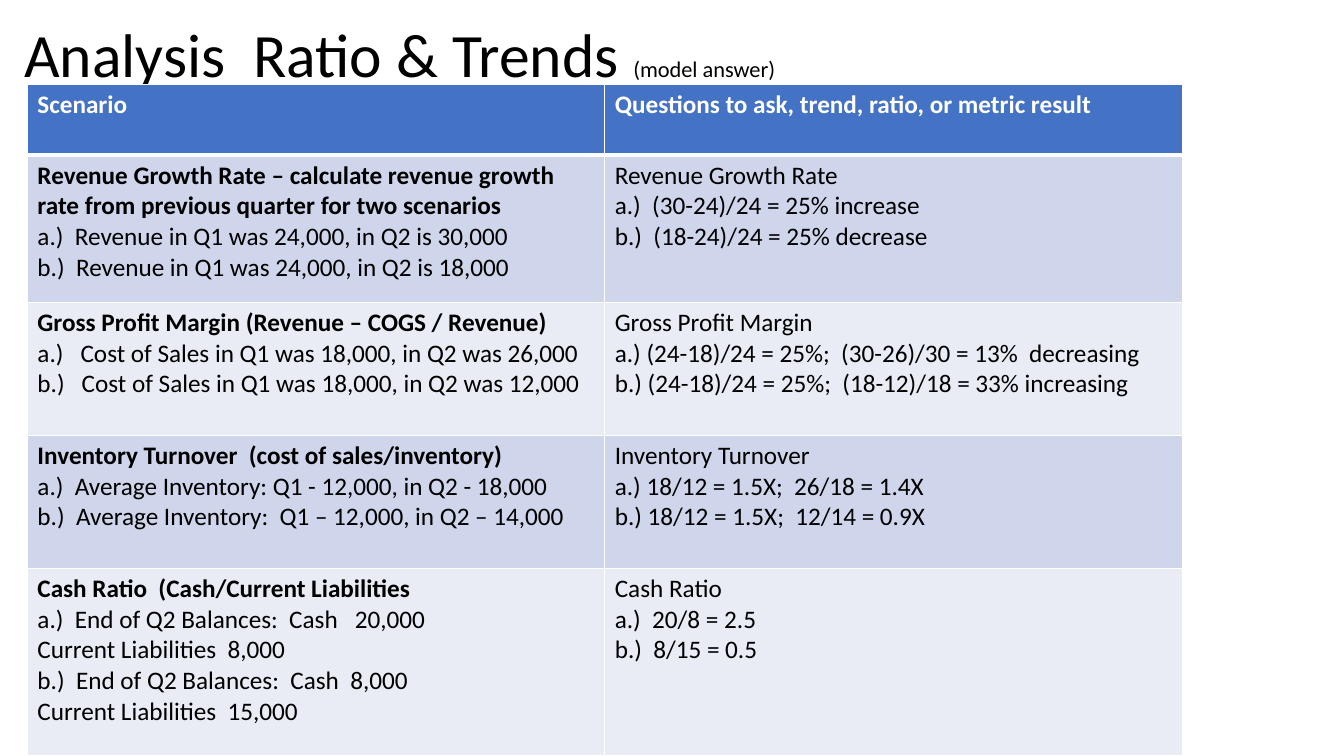
"""Build a slide with a table of financial ratio scenarios and model answers."""
from dataclasses import dataclass

from lxml.etree import SubElement
from pptx import Presentation
from pptx.dml.color import RGBColor
from pptx.enum.text import MSO_ANCHOR, MSO_AUTO_SIZE, PP_ALIGN
from pptx.oxml.ns import qn
from pptx.util import Cm, Pt

COLORS = {
    "white": "FFFFFF",
    "black": "000000",
    "header": "4472C4",
    "dark_band": "CFD5EA",
    "light_band": "E9EBF5",
}
FONT = "Calibri"
COLUMN_WIDTH = 14.55


@dataclass(frozen=True)
class RatioRow:
    """Hold one table row: its height in centimetres and the lines of both cells."""

    height: float
    scenario: tuple[str, ...]
    answer: tuple[str, ...]


ROWS = (
    RatioRow(1.78, ("Scenario",), ("Questions to ask, trend, ratio, or metric result",)),
    RatioRow(
        3.71,
        (
            "Revenue Growth Rate – calculate revenue growth rate from previous quarter for two scenarios",
            "a.)  Revenue in Q1 was 24,000, in Q2 is 30,000",
            "b.)  Revenue in Q1 was 24,000, in Q2 is 18,000",
        ),
        ("Revenue Growth Rate", "a.)  (30-24)/24 = 25% increase", "b.)  (18-24)/24 = 25% decrease"),
    ),
    RatioRow(
        3.35,
        (
            "Gross Profit Margin (Revenue – COGS / Revenue)",
            "a.)   Cost of Sales in Q1 was 18,000, in Q2 was 26,000",
            "b.)   Cost of Sales in Q1 was 18,000, in Q2 was 12,000",
        ),
        (
            "Gross Profit Margin",
            "a.) (24-18)/24 = 25%;  (30-26)/30 = 13%  decreasing",
            "b.) (24-18)/24 = 25%;  (18-12)/18 = 33% increasing",
        ),
    ),
    RatioRow(
        3.35,
        (
            "Inventory Turnover  (cost of sales/inventory)",
            "a.)  Average Inventory: Q1 - 12,000, in Q2 - 18,000",
            "b.)  Average Inventory:  Q1 – 12,000, in Q2 – 14,000",
        ),
        ("Inventory Turnover", "a.) 18/12 = 1.5X;  26/18 = 1.4X", "b.) 18/12 = 1.5X;  12/14 = 0.9X"),
    ),
    RatioRow(
        4.72,
        (
            "Cash Ratio  (Cash/Current Liabilities",
            "a.)  End of Q2 Balances:  Cash   20,000",
            "Current Liabilities  8,000",
            "b.)  End of Q2 Balances:  Cash  8,000",
            "Current Liabilities  15,000",
        ),
        ("Cash Ratio", "a.)  20/8 = 2.5", "b.)  8/15 = 0.5"),
    ),
)


def set_font(font, size: float, color: str, bold: bool = False) -> None:
    """Apply the slide's typeface with a size, colour and weight."""
    font.name = FONT
    font.size = Pt(size)
    font.bold = bold
    font.color.rgb = RGBColor.from_string(COLORS[color])


def set_borders(cell, top: float, bottom: float) -> None:
    """Draw white borders, one point wide at the sides."""
    properties = cell._tc.get_or_add_tcPr()
    widths = {"lnL": 1, "lnR": 1, "lnT": top, "lnB": bottom}
    for position, (side, width) in enumerate(widths.items()):
        line = SubElement(properties, qn(f"a:{side}"), w=str(Pt(width)))
        fill = SubElement(line, qn("a:solidFill"))
        SubElement(fill, qn("a:srgbClr"), val=COLORS["white"])
        properties.insert(position, line)


def fill_cell(cell, lines: tuple[str, ...], row: int, column: int) -> None:
    """Write the lines of a cell and style it by its place in the table."""
    band = "header" if row == 0 else ("light_band", "dark_band")[row % 2]
    cell.fill.solid()
    cell.fill.fore_color.rgb = RGBColor.from_string(COLORS[band])
    set_borders(cell, top=3 if row == 1 else 1, bottom=3 if row == 0 else 1)
    frame = cell.text_frame
    frame.text = "\n".join(lines)
    for number, para in enumerate(frame.paragraphs):
        bold = row == 0 or (column == 0 and number == 0)
        set_font(para.font, 18, "white" if row == 0 else "black", bold)


def add_title(page) -> None:
    """Place the title with its smaller remark."""
    title = page.shapes.title
    title.left, title.top, title.width, title.height = Cm(0.36), Cm(0.43), Cm(29.21), Cm(2.06)
    frame = title.text_frame
    frame.word_wrap = True
    frame.auto_size = MSO_AUTO_SIZE.NONE
    frame.vertical_anchor = MSO_ANCHOR.MIDDLE
    para = frame.paragraphs[0]
    para.alignment = PP_ALIGN.LEFT
    para.line_spacing = 0.9
    for text, size in (("Analysis  Ratio & Trends ", 44), ("(model answer)", 16)):
        span = para.add_run()
        span.text = text
        set_font(span.font, size, "black")


def add_ratio_table(page) -> None:
    """Add the table of scenarios and answers."""
    height = sum(row.height for row in ROWS)
    table = page.shapes.add_table(
        len(ROWS), 2, Cm(0.69), Cm(2.13), Cm(2 * COLUMN_WIDTH), Cm(height)
    ).table
    for column in table.columns:
        column.width = Cm(COLUMN_WIDTH)
    for index, row in enumerate(ROWS):
        table.rows[index].height = Cm(row.height)
        for column, lines in enumerate((row.scenario, row.answer)):
            fill_cell(table.cell(index, column), lines, index, column)


def main() -> None:
    """Create the deck and save it."""
    deck = Presentation()
    deck.slide_width, deck.slide_height = Cm(33.87), Cm(19.05)
    page = deck.slides.add_slide(deck.slide_layouts[5])
    add_title(page)
    add_ratio_table(page)
    deck.save("out.pptx")


if __name__ == "__main__":
    main()
